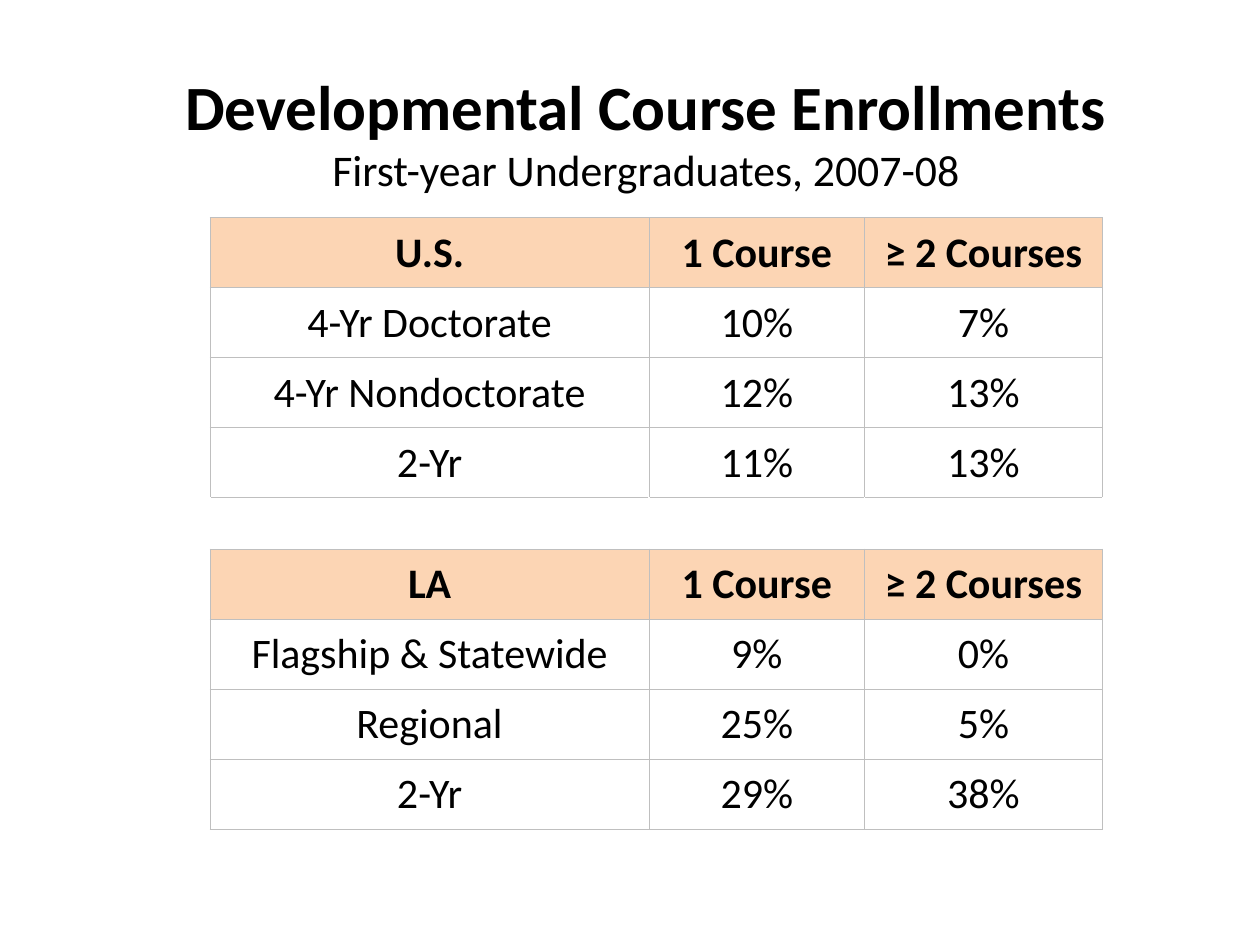
from dataclasses import dataclass
from lxml.etree import SubElement
from pptx import Presentation
from pptx.dml.color import RGBColor
from pptx.enum.text import MSO_ANCHOR as Anchor, MSO_AUTO_SIZE as AutoSize, PP_ALIGN as Align
from pptx.oxml.ns import qn
from pptx.slide import Slide
from pptx.util import Pt

BLACK = RGBColor(0x00, 0x00, 0x00)
PEACH = RGBColor(0xFC, 0xD5, 0xB4)
GREY = RGBColor(0xBF, 0xBF, 0xBF)

COLUMN_WIDTHS = [251, 123, 136]
ROW_HEIGHT, GAP_HEIGHT = 40, 26
COURSES = ["1 Course", "≥ 2 Courses"]
ENROLLMENTS = [
    ["U.S.", *COURSES],
    ["4-Yr Doctorate", "10%", "7%"],
    ["4-Yr Nondoctorate", "12%", "13%"],
    ["2-Yr", "11%", "13%"],
    ["", "", ""],
    ["LA", *COURSES],
    ["Flagship & Statewide", "9%", "0%"],
    ["Regional", "25%", "5%"],
    ["2-Yr", "29%", "38%"],
]


@dataclass
class Painter:
    """Draws styled elements on the current slide."""

    page: Slide
    font: str = "Calibri"

    def style(self, span, size, bold):
        span.font.name = self.font
        span.font.size = Pt(size)
        span.font.bold = bold
        span.font.color.rgb = BLACK

    def title(self, heading, subheading, left, top, width, height):
        box = self.page.shapes.title
        box.left, box.top, box.width, box.height = map(Pt, (left, top, width, height))
        frame = box.text_frame
        frame.text = f"{heading}\v{subheading}"
        frame.auto_size = AutoSize.NONE
        frame.vertical_anchor = Anchor.MIDDLE
        para = frame.paragraphs[0]
        para.alignment = Align.CENTER
        for span, size, bold in zip(para.runs, (36, 25), (True, False)):
            self.style(span, size, bold)
        line_break = frame._txBody.find(".//" + qn("a:br"))
        SubElement(line_break, qn("a:rPr"), sz="3600")

    def borders(self, cell, sides):
        properties = cell._tc.get_or_add_tcPr()
        for side in sides:
            line = SubElement(properties, qn(f"a:ln{side}"), w=str(Pt(0.5)))
            fill = SubElement(line, qn("a:solidFill"))
            SubElement(fill, qn("a:srgbClr"), val=str(GREY))

    def cell(self, cell, text, header):
        self.borders(cell, "LRTB" if text else "TB")
        if header:
            cell.fill.solid()
            cell.fill.fore_color.rgb = PEACH
        else:
            cell.fill.background()
        if not text:
            return
        cell.text_frame.text = text
        cell.vertical_anchor = Anchor.MIDDLE
        cell.margin_left = cell.margin_right = cell.margin_top = Pt(0.75)
        cell.margin_bottom = 0
        para = cell.text_frame.paragraphs[0]
        para.alignment = Align.CENTER
        self.style(para.runs[0], 24, header)

    def table(self, rows, widths, left, top):
        heights = [ROW_HEIGHT if any(row) else GAP_HEIGHT for row in rows]
        table = self.page.shapes.add_table(
            len(rows), len(widths), Pt(left), Pt(top), Pt(sum(widths)), Pt(sum(heights))
        ).table
        table.horz_banding = False
        table.first_row = False
        for column, width in zip(table.columns, widths):
            column.width = Pt(width)
        for row, height, texts in zip(table.rows, heights, rows):
            row.height = Pt(height)
            for cell, text in zip(row.cells, texts):
                self.cell(cell, text, header=texts[1:] == COURSES)


def main():
    deck = Presentation()
    deck.slide_width, deck.slide_height = Pt(720), Pt(540)
    painter = Painter(deck.slides.add_slide(deck.slide_layouts[5]))
    painter.title("Developmental Course Enrollments",
                  "First-year Undergraduates, 2007-08", 54, 30, 630, 90)
    painter.table(ENROLLMENTS, COLUMN_WIDTHS, 120, 124.5)
    deck.save("out.pptx")


if __name__ == "__main__":
    main()
